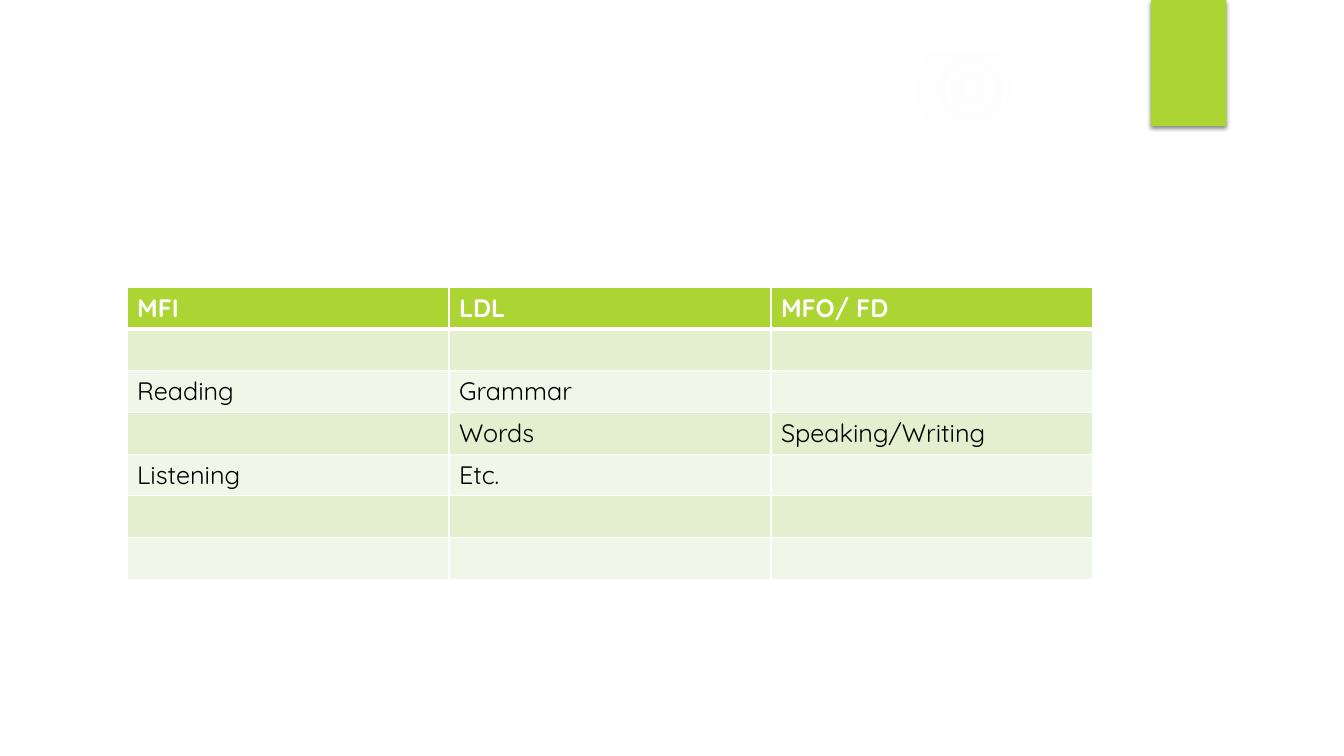
from lxml.etree import SubElement
from pptx import Presentation
from pptx.dml.color import RGBColor
from pptx.enum.shapes import MSO_SHAPE
from pptx.oxml import parse_xml
from pptx.oxml.ns import nsdecls, qn
from pptx.util import Inches, Pt

COLORS = {"lime": "ACD433", "pale": "E3EFCE", "mist": "F1F7E8",
          "white": "FFFFFF", "black": "000000", "glow": "F7F7F7"}
GLOWS = [
    ((0, 35, 55, 55), (11, 10, 75)),
    ((0, 38, 31, 31), (8, 8, 72)),
    ((113, 22, 37, 37), (7, 6, 69)),
    ((105, 0, 21, 21), (14, 7, 73)),
    ((113, 77, 13, 13), (14, 7, 66)),
]
STRIP = [(112.1, 30), (130, 28.4), (154.7, 25.7), (154, 19.9),
         (140, 24), (126, 27.2), (111.6, 29.1)]
SHEET = [(6, 24.5), (20, 26.7), (45, 28.8), (75, 29.7), (90, 29.7), (110, 29),
         (130, 27.3), (154, 24.5), (154, 84), (6, 84)]
FRAME_OUTER = [(0, 0), (0, 90), (160, 90), (160, 0)]
FRAME_INNER = [(153.7, 83.8), (6.2, 83.8), (6.2, 6.2), (153.7, 6.2)]
SKILLS = [
    ["MFI", "LDL", "MFO/ FD"],
    ["", "", ""],
    ["Reading", "Grammar", ""],
    ["", "Words", "Speaking/Writing"],
    ["Listening", "Etc.", ""],
    ["", "", ""],
    ["", "", ""],
]


class SlideBuilder:
    """Draws on one slide over a grid of 160 columns by 90 rows."""

    def __init__(self, deck, font="Quicksand", size=18):
        self.page = deck.slides.add_slide(deck.slide_layouts[6])
        self.column = deck.slide_width / 160
        self.row = deck.slide_height / 90
        self.font, self.size = font, size

    def point(self, across, down):
        return round(across * self.column), round(down * self.row)

    def area(self, left, top, width, height):
        return *self.point(left, top), *self.point(width, height)

    def paint(self, target, color):
        target.fill.solid()
        target.fill.fore_color.rgb = RGBColor.from_string(COLORS[color])

    def shape(self, kind, place):
        box = self.page.shapes.add_shape(kind, *self.area(*place))
        box.shadow.inherit = False
        box.line.fill.background()
        return box

    def glow(self, place, fade):
        center, middle, edge = fade
        box = self.shape(MSO_SHAPE.OVAL, place)
        stops = "".join(
            f'<a:gs pos="{position * 1000}"><a:srgbClr val="{COLORS["glow"]}">'
            f'<a:alpha val="{alpha * 1000}"/></a:srgbClr></a:gs>'
            for position, alpha in ((0, center), (36, middle), (edge, 0)))
        box._element.spPr.find(qn("a:prstGeom")).addnext(parse_xml(
            f'<a:gradFill {nsdecls("a")}><a:gsLst>{stops}</a:gsLst>'
            '<a:path path="circle"><a:fillToRect l="50000" t="50000" '
            'r="50000" b="50000"/></a:path></a:gradFill>'))

    def outline(self, *contours, rotation=0, alpha=100):
        builder = None
        for contour in contours:
            start, *others = [self.point(*corner) for corner in contour]
            if builder is None:
                builder = self.page.shapes.build_freeform(*start)
            else:
                builder.move_to(*start)
            builder.add_line_segments(others, close=True)
        box = builder.convert_to_shape()
        box.shadow.inherit = False
        box.line.fill.background()
        box.rotation = rotation
        self.paint(box, "white")
        if alpha < 100:
            color = box._element.spPr.find(qn("a:solidFill"))[0]
            SubElement(color, qn("a:alpha"), val=str(alpha * 1000))

    def tab(self, *place):
        box = self.shape(MSO_SHAPE.RECTANGLE, place)
        self.paint(box, "lime")
        effects = box._element.spPr.find(qn("a:effectLst"))
        shadow = SubElement(effects, qn("a:outerShdw"), blurRad=str(Pt(3)),
                            dist=str(Pt(2)), dir="5400000", rotWithShape="0")
        color = SubElement(shadow, qn("a:srgbClr"), val=COLORS["black"])
        SubElement(color, qn("a:alpha"), val="45000")

    def borders(self, cell, top, bottom):
        widths = {"lnL": 1, "lnR": 1, "lnT": top, "lnB": bottom}
        properties = cell._tc.get_or_add_tcPr()
        for index, (side, width) in enumerate(widths.items()):
            properties.insert(index, parse_xml(
                f'<a:{side} {nsdecls("a")} w="{Pt(width)}"><a:solidFill>'
                f'<a:srgbClr val="{COLORS["white"]}"/></a:solidFill></a:{side}>'))

    def table(self, values, *place):
        table = self.page.shapes.add_table(
            len(values), len(values[0]), *self.area(*place)).table
        table.horz_banding = False
        for row, texts in enumerate(values):
            header = row == 0
            fill = "lime" if header else ("mist", "pale")[row % 2]
            for column, text in enumerate(texts):
                cell = table.cell(row, column)
                cell.text = text
                self.paint(cell, fill)
                self.borders(cell, 3 if row == 1 else 1, 3 if header else 1)
                font = cell.text_frame.paragraphs[0].font
                font.name, font.size, font.bold = self.font, Pt(self.size), header
                font.color.rgb = RGBColor.from_string(
                    COLORS["white" if header else "black"])


def main():
    deck = Presentation()
    deck.slide_width, deck.slide_height = Inches(13.33), Inches(7.5)
    builder = SlideBuilder(deck)
    for place, fade in GLOWS:
        builder.glow(place, fade)
    builder.outline(STRIP, rotation=350.2, alpha=20)
    builder.outline(SHEET)
    builder.outline(FRAME_OUTER, FRAME_INNER)
    builder.tab(137, 0, 9, 15)
    builder.table(SKILLS, 15.12, 34.2, 115, 34.08)
    deck.save("out.pptx")


if __name__ == "__main__":
    main()
